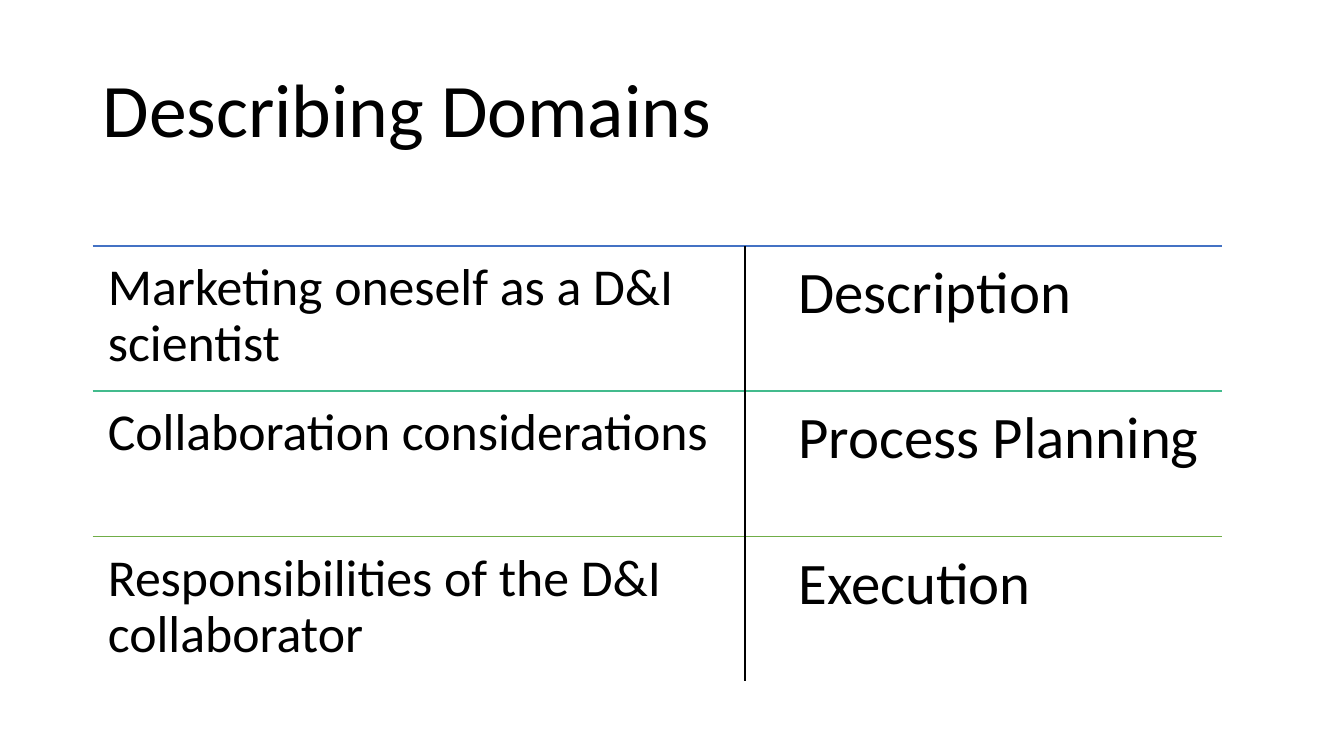
from lxml import etree
from pptx import Presentation
from pptx.dml.color import RGBColor
from pptx.enum.shapes import MSO_CONNECTOR
from pptx.enum.text import MSO_ANCHOR
from pptx.oxml.ns import qn
from pptx.util import Inches, Pt

STRAIGHT = MSO_CONNECTOR.STRAIGHT
TOP, MIDDLE = MSO_ANCHOR.TOP, MSO_ANCHOR.MIDDLE
FONT = "Calibri"
COLORS = {"text": "000000", "blue": "4472C4", "teal": "43BB8D", "green": "70AD47"}
RULES = ("blue", "teal", "green")
DOMAINS = (
    "Marketing oneself as a D&I scientist",
    "Collaboration considerations",
    "Responsibilities of the D&I collaborator",
)
STAGES = ("Description", "Process Planning", "Execution")


def add_text(slide, box, text, size, inset, anchor=TOP):
    frame = slide.shapes.add_textbox(*map(Inches, box)).text_frame
    frame.word_wrap = True
    frame.vertical_anchor = anchor
    frame.margin_left = frame.margin_right = Inches(inset[0])
    frame.margin_top = frame.margin_bottom = Inches(inset[1])
    frame.text = text
    para = frame.paragraphs[0]
    para.line_spacing = 0.9
    font = para.runs[0].font
    font.name, font.size = FONT, Pt(size)
    font.color.rgb = RGBColor.from_string(COLORS["text"])


def add_line(slide, start, end, color, width):
    line = slide.shapes.add_connector(STRAIGHT, *map(Inches, start + end))
    line.line.color.rgb = RGBColor.from_string(COLORS[color])
    line.line.width = Pt(width)
    etree.SubElement(line._element.spPr, qn("a:effectLst"))


def add_title(slide, box):
    add_text(slide, box, "Describing Domains", 54, (0.1, 0.05), MIDDLE)


def add_list(slide, box, items, size, inset):
    """Stack the items in equal rows, each under a coloured rule."""
    left, top, width, height = box
    row = height / len(items)
    for i, (item, color) in enumerate(zip(items, RULES)):
        y = top + i * row
        add_line(slide, (left, y), (left + width, y), color, 1)
        add_text(slide, (left, y, width, row), item, size, (inset, inset))


def add_body(slide, box):
    left, top, width, height = box
    add_list(slide, (left, top, 7.47, height), DOMAINS, 37, 0.15)
    stage = 4.37
    add_list(slide, (left + width - stage, top, stage, height), STAGES, 42, 0.17)
    split = left + 6.47
    add_line(slide, (split, top), (split, top + height), "text", 1.5)


def main():
    deck = Presentation()
    deck.slide_width, deck.slide_height = Inches(13.33), Inches(7.5)
    slide = deck.slides.add_slide(deck.slide_layouts[6])
    add_title(slide, (0.92, 0.4, 11.5, 1.45))
    add_body(slide, (0.92, 2.44, 11.2, 4.32))
    deck.save("out.pptx")


if __name__ == "__main__":
    main()
